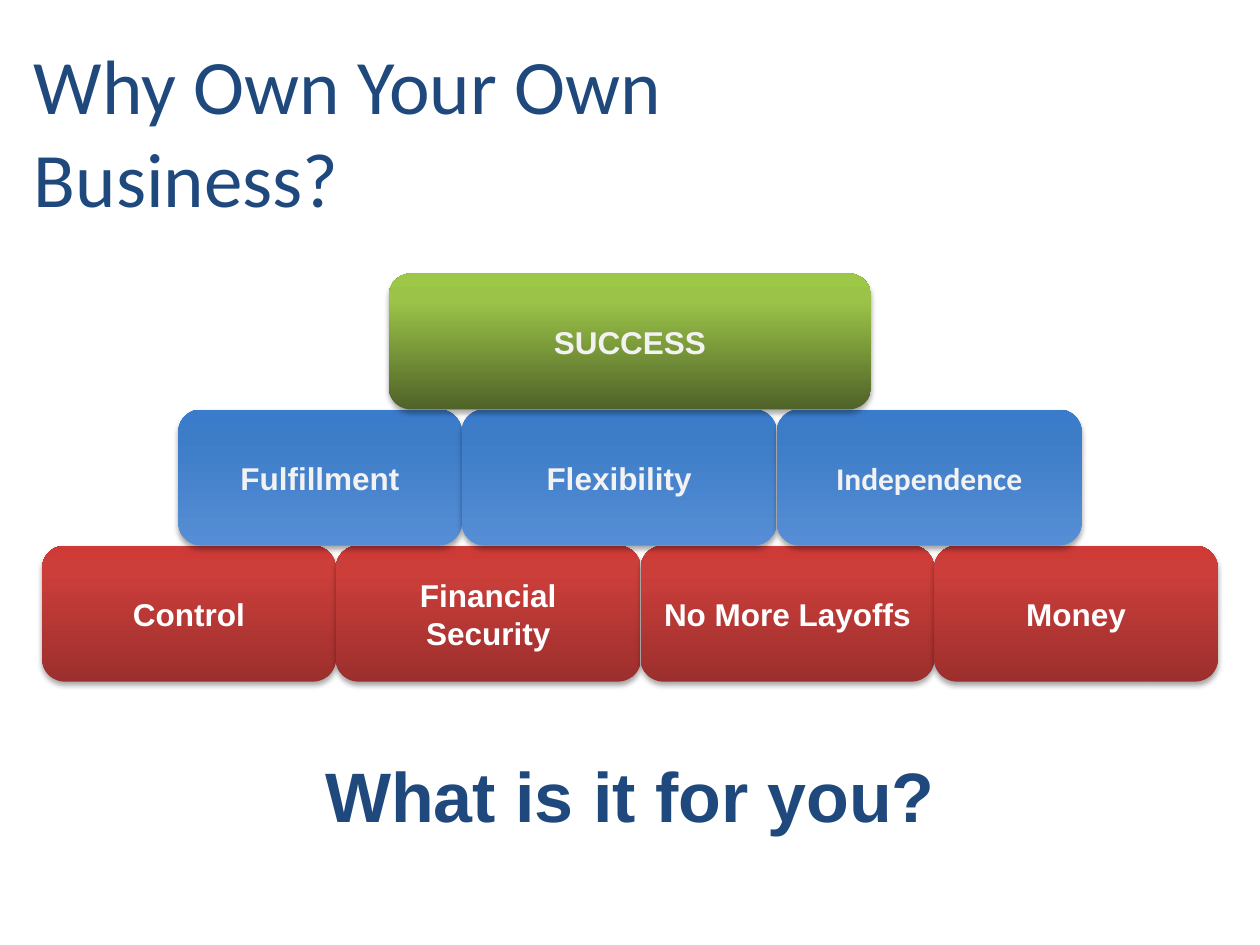
"""Build a slide with a pyramid of reasons for owning a business."""
import lxml.etree
import pptx
import pptx.dml.color
import pptx.enum.shapes
import pptx.enum.text
import pptx.oxml
import pptx.oxml.ns
import pptx.util

Inches = pptx.util.Inches
ALIGN = pptx.enum.text.PP_ALIGN

COLORS = {"navy": "1F497D", "white": "FFFFFF", "pale": "F2F2F2", "shadow": "000000"}
GRADIENTS = {
    "red": ("9C2F2D", "CB3E3A", "CE3B37"),
    "blue": ("558ED5", "3D7CC7", "3A7CCB"),
    "green": ("4F6228", "9BC348", "9DC746"),
}
STOPS = (0, 80, 100)
TITLE = ["Why Own Your Own", "Business?"]
QUESTION = ["What is it for you?"]
ROWS = [
    ("red", "white", [("Control", 2.33, "Arial"), ("Financial Security", 2.42, "Arial"),
                      ("No More Layoffs", 2.33, "Arial"), ("Money", 2.25, "Arial")]),
    ("blue", "pale", [("Fulfillment", 2.25, "Arial"), ("Flexibility", 2.5, "Arial"),
                      ("Independence", 2.42, "Calibri")]),
    ("green", "pale", [("SUCCESS", 3.83, "Arial")]),
]
SLIDE_W, SLIDE_H = 10, 7.5
BLOCK_H, PYRAMID_BOTTOM = 1.08, 5.41


def write(tf, lines, font, size, color, bold, align):
    tf.word_wrap = True
    for i, line in enumerate(lines):
        p = tf.paragraphs[0] if i == 0 else tf.add_paragraph()
        p.text = line
        p.alignment = align
        p.font.name, p.font.size, p.font.bold = font, pptx.util.Pt(size), bold
        p.font.color.rgb = pptx.dml.color.RGBColor.from_string(COLORS[color])


def add_text(s, box, *style):
    sp = s.shapes.add_textbox(*map(Inches, box))
    write(sp.text_frame, *style)
    sp.text_frame.auto_size = pptx.enum.text.MSO_AUTO_SIZE.SHAPE_TO_FIT_TEXT


def add_effects(sp, gradient):
    ns = pptx.oxml.ns.nsdecls("a")
    stops = "".join(f'<a:gs pos="{pos * 1000}"><a:srgbClr val="{c}"/></a:gs>'
                    for pos, c in zip(STOPS, GRADIENTS[gradient]))
    fill = pptx.oxml.parse_xml(
        f'<a:gradFill {ns} rotWithShape="1"><a:gsLst>{stops}</a:gsLst>'
        '<a:lin ang="16200000" scaled="0"/></a:gradFill>')
    shadow = pptx.oxml.parse_xml(
        f'<a:outerShdw {ns} blurRad="40000" dist="23000" dir="5400000" rotWithShape="0">'
        f'<a:srgbClr val="{COLORS["shadow"]}"><a:alpha val="35000"/></a:srgbClr></a:outerShdw>')
    sp.line.fill.background()
    sp.shadow.inherit = False
    props = sp.element.spPr
    props.find(pptx.oxml.ns.qn("a:prstGeom")).addnext(fill)
    props.find(pptx.oxml.ns.qn("a:effectLst")).append(shadow)


def add_block(shapes, box, text, font, gradient, color):
    sp = shapes.add_shape(pptx.enum.shapes.MSO_SHAPE.ROUNDED_RECTANGLE, *map(Inches, box))
    add_effects(sp, gradient)
    sp.text_frame.vertical_anchor = pptx.enum.text.MSO_ANCHOR.MIDDLE
    write(sp.text_frame, [text], font, 18, color, True, ALIGN.CENTER)


def main():
    prs = pptx.Presentation()
    prs.slide_width, prs.slide_height = Inches(SLIDE_W), Inches(SLIDE_H)
    s = prs.slides.add_slide(prs.slide_layouts[6])
    add_text(s, (0.17, 0.25, 6.92, 1.58), TITLE, "Calibri", 44, "navy", False, ALIGN.LEFT)
    add_text(s, (2.25, 5.92, 5.5, 0.77), QUESTION, "Arial", 40, "navy", True, ALIGN.CENTER)
    pyramid = s.shapes.add_group_shape()
    for level, (gradient, color, blocks) in enumerate(ROWS, 1):
        x = (SLIDE_W - sum(width for _, width, _ in blocks)) / 2
        y = PYRAMID_BOTTOM - level * BLOCK_H
        for text, width, font in blocks:
            add_block(pyramid.shapes, (x, y, width, BLOCK_H), text, font, gradient, color)
            x += width
    prs.save("out.pptx")


if __name__ == "__main__":
    main()
